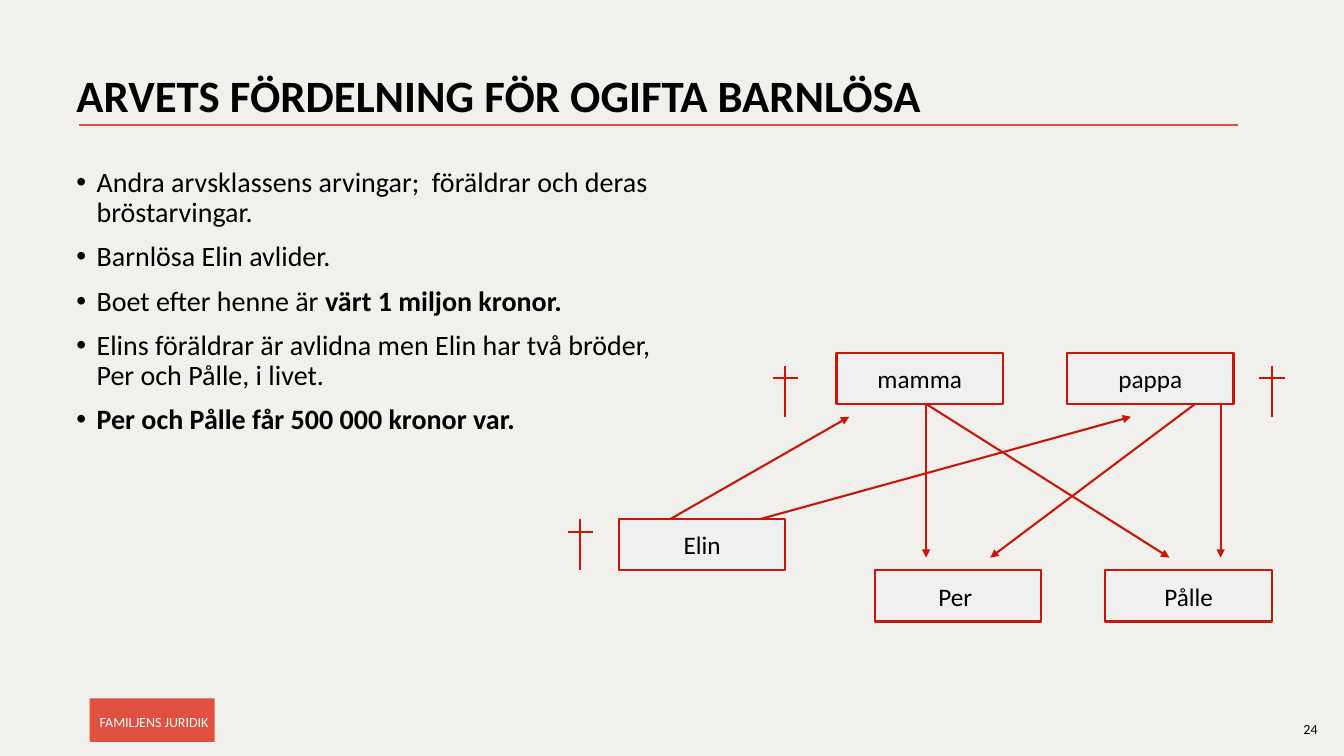
from lxml import etree
from pptx import Presentation, util as u
from pptx.dml.color import RGBColor
from pptx.enum import shapes, text
from pptx.oxml import ns

WIDTH, HEIGHT = 13.33, 7.5
COLORS = {
    "paper": "F1F0EC",
    "accent": "E05040",
    "line": "C7170A",
    "box": "F0F0F0",
    "ink": "000000",
    "white": "FFFFFF",
}
CELL = 0.127
TREE_LEFT, TREE_TOP = 5.63, 3.5
BOX_COLS, BOX_ROWS = 13, 4

# Column and row of each person's box in the family tree
PEOPLE = {
    "mamma": (21, 0),
    "pappa": (39, 0),
    "Elin": (4, 13),
    "Pålle": (42, 17),
    "Per ": (24, 17),
}
# Start and end of each arrow, as column and row
ARROWS = [
    ((8, 13), (22, 5)),
    ((15, 13), (44, 5)),
    ((28, 4), (28, 16)),
    ((28, 4), (47, 16)),
    ((51, 4), (51, 16)),
    ((49, 4), (33, 16)),
]
# Top left corner of each cross marking a deceased person
CROSSES = [(16, 1), (54, 1), (0, 13)]

# Each bullet is a list of (wording, bold) runs
BULLETS = [
    [("Andra arvsklassens arvingar;  föräldrar och deras bröstarvingar.", False)],
    [("Barnlösa Elin avlider.", False)],
    [("Boet efter henne är ", False), ("värt 1 miljon kronor.", True)],
    [("Elins föräldrar är avlidna men Elin har två bröder, Per och Pålle, i livet.", False)],
    [("Per och Pålle får 500 000 kronor var.", True)],
]


def color(name):
    return RGBColor.from_string(COLORS[name])


def tree_point(col, row):
    return TREE_LEFT + col * CELL, TREE_TOP + row * CELL


class InheritanceSlide:
    font = "Calibri"
    line_width = u.Pt(1.5)

    def __init__(self, deck):
        self.slide = deck.slides.add_slide(deck.slide_layouts[6])
        fill = self.slide.background.fill
        fill.solid()
        fill.fore_color.rgb = color("paper")

    def add_run(self, paragraph, wording, size, bold=False, ink="ink"):
        run = paragraph.add_run()
        run.text = wording
        run.font.name, run.font.size, run.font.bold = self.font, u.Pt(size), bold
        run.font.color.rgb = color(ink)

    def text_frame(self, left, top, width, height):
        area = self.slide.shapes.add_textbox(*map(u.Inches, (left, top, width, height)))
        area.text_frame.word_wrap = True
        return area.text_frame

    def label(self, wording, bounds, size, bold=False):
        paragraph = self.text_frame(*bounds).paragraphs[0]
        paragraph.line_spacing = 0.9
        self.add_run(paragraph, wording, size, bold)

    def bullets(self, items, bounds, size):
        frame = self.text_frame(*bounds)
        for index, item in enumerate(items):
            paragraph = frame.add_paragraph() if index else frame.paragraphs[0]
            paragraph.line_spacing = 0.9
            if index:
                paragraph.space_before = u.Pt(10)
            props = paragraph._p.get_or_add_pPr()
            props.set("marL", str(u.Inches(0.2)))
            props.set("indent", str(-u.Inches(0.2)))
            etree.SubElement(props, ns.qn("a:buFont"), typeface="Arial")
            etree.SubElement(props, ns.qn("a:buChar"), char="•")
            for wording, bold in item:
                self.add_run(paragraph, wording, size, bold)

    def box(self, wording, bounds, size, fill, ink, outline=None,
            align=text.PP_ALIGN.CENTER, margins=(0.04, 0.04, 0.04, 0.04)):
        panel = self.slide.shapes.add_shape(
            shapes.MSO_SHAPE.RECTANGLE, *map(u.Inches, bounds))
        panel.shadow.inherit = False
        panel.fill.solid()
        panel.fill.fore_color.rgb = color(fill)
        if outline:
            panel.line.color.rgb = color(outline)
            panel.line.width = self.line_width
        else:
            panel.line.fill.background()
        frame = panel.text_frame
        frame.word_wrap = False
        frame.vertical_anchor = text.MSO_ANCHOR.MIDDLE
        (frame.margin_left, frame.margin_top,
         frame.margin_right, frame.margin_bottom) = map(u.Inches, margins)
        paragraph = frame.paragraphs[0]
        paragraph.alignment = align
        self.add_run(paragraph, wording, size, ink=ink)

    def line(self, start, end, stroke="line", arrow=False):
        connector = self.slide.shapes.add_connector(
            shapes.MSO_CONNECTOR.STRAIGHT, *map(u.Inches, (*start, *end)))
        connector.line.color.rgb = color(stroke)
        connector.line.width = self.line_width
        if arrow:
            etree.SubElement(connector.line._get_or_add_ln(),
                             ns.qn("a:tailEnd"), type="triangle")
        etree.SubElement(connector._element.spPr, ns.qn("a:effectLst"))

    def person(self, name, col, row):
        bounds = (*tree_point(col, row), BOX_COLS * CELL, BOX_ROWS * CELL)
        self.box(name, bounds, 18, "box", "ink", outline="line")

    def cross(self, col, row):
        self.line(tree_point(col + 1, row), tree_point(col + 1, row + 4))
        self.line(tree_point(col, row + 1), tree_point(col + 2, row + 1))


def main():
    deck = Presentation()
    deck.slide_width, deck.slide_height = u.Inches(WIDTH), u.Inches(HEIGHT)
    page = InheritanceSlide(deck)

    page.label("24", (12.83, 7.12, 0.4, 0.27), 10)
    page.line((0.78, 1.24), (12.28, 1.24), "accent")
    page.label("ARVETS FÖRDELNING FÖR OGIFTA BARNLÖSA",
               (0.66, 0.68, 11.5, 1.45), 32, bold=True)
    page.box("FAMILJENS JURIDIK", (0.89, 6.93, 1.24, 0.43), 10, "accent", "white",
             align=text.PP_ALIGN.LEFT, margins=(0.1, 0.08, 0.04, 0.05))
    page.bullets(BULLETS, (0.66, 1.62, 6.18, 4.76), 20)

    for name, place in PEOPLE.items():
        page.person(name, *place)
    for start, end in ARROWS:
        page.line(tree_point(*start), tree_point(*end), arrow=True)
    for place in CROSSES:
        page.cross(*place)

    deck.save("out.pptx")


if __name__ == "__main__":
    main()
